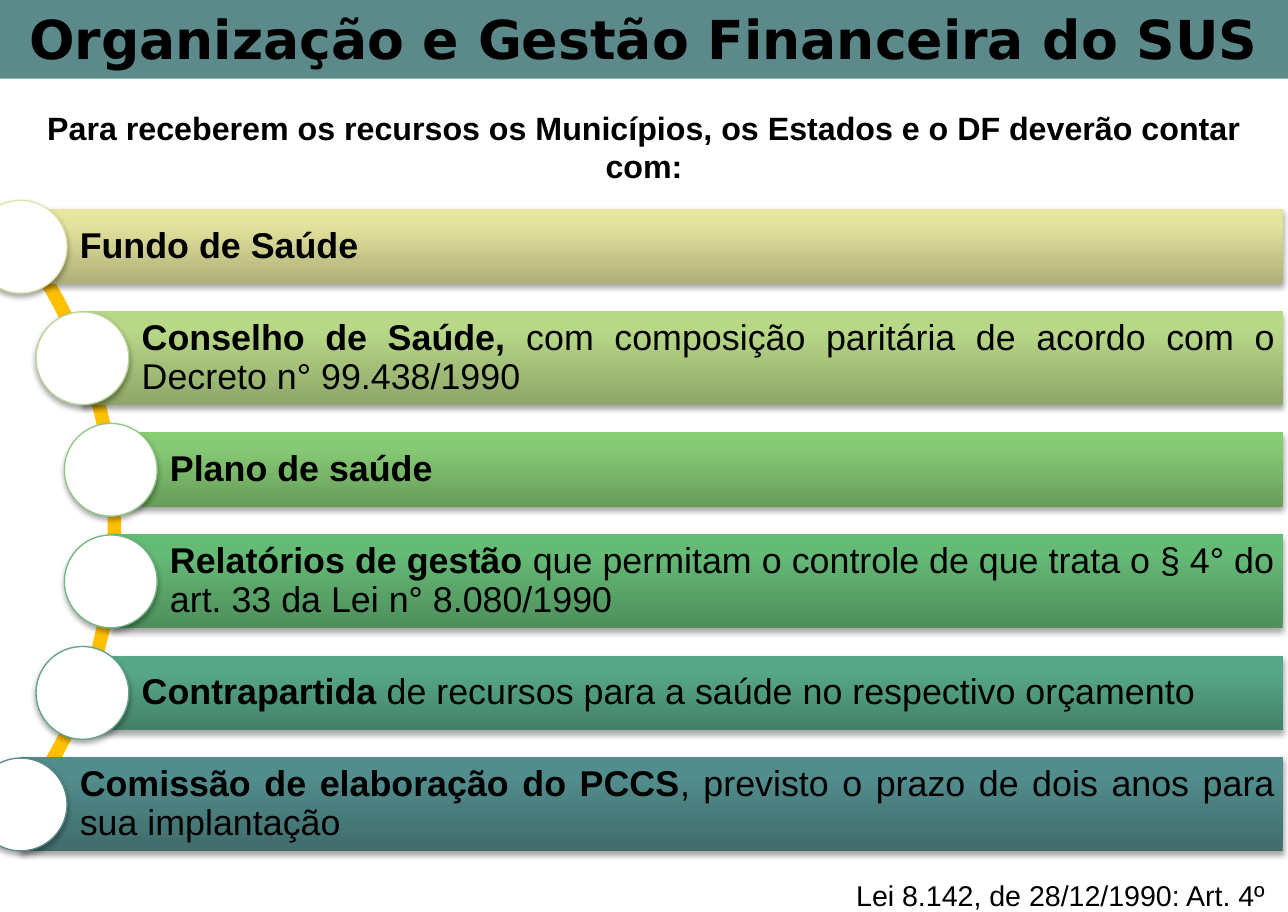
from copy import deepcopy

from pptx import Presentation
from pptx.dml.color import RGBColor
from pptx.enum.shapes import MSO_SHAPE
from pptx.enum.text import MSO_ANCHOR, PP_ALIGN
from pptx.oxml import parse_xml
from pptx.oxml.ns import nsdecls, qn
from pptx.util import Inches, Pt

COLORS = {"title": "5C8A8A", "arc": "FFC000", "text": "000000", "circle": "FFFFFF"}

# Level, bar height, gradient from bottom to top, circle outline, bold text, plain text
ITEMS = [
    (0, 0.58, ("AFAF79", "E3E39D", "E6E69C"), "E2E2AA", "Fundo de Saúde", ""),
    (1, 0.73, ("8EA668", "B8D888", "B9DA87"), "BCD596", "Conselho de Saúde, ",
     "com composição paritária de acordo com o Decreto n° 99.438/1990"),
    (2, 0.58, ("679C5A", "86CA75", "86CD74"), "91C783", "Plano de saúde", ""),
    (2, 0.73, ("4E8F5B", "65BA76", "64BD76"), "72B680", "Relatórios de gestão ",
     "que permitam o controle de que trata o § 4° do art. 33 da Lei n° 8.080/1990"),
    (1, 0.58, ("438168", "57A888", "56AA88"), "64A38A", "Contrapartida",
     " de recursos para a saúde no respectivo orçamento"),
    (0, 0.73, ("406C6C", "528C8C", "528E8E"), "5C8A8A", "Comissão de elaboração do PCCS",
     ", previsto o prazo de dois anos para sua implantação"),
]
LEVEL_LEFT = [0.16, 0.64, 0.86]
BAR_RIGHT = 9.96
FIRST_CENTER, STEP = 1.915, 0.866
DIAMETER = 0.72

SHADOW = parse_xml(
    f'<a:outerShdw {nsdecls("a")} blurRad="40000" dist="23000" dir="5400000" rotWithShape="0">'
    '<a:srgbClr val="000000"><a:alpha val="35000"/></a:srgbClr></a:outerShdw>'
)


def write(shape, *texts, size=20, font="Arial", bold=True, align=PP_ALIGN.CENTER,
          anchor=MSO_ANCHOR.TOP, margins=(0.1, 0.05, 0.1, 0.05), spacing=None):
    """Fill one paragraph; only the first text takes the bold setting."""
    frame = shape.text_frame
    frame.word_wrap = True
    frame.vertical_anchor = anchor
    (frame.margin_left, frame.margin_top,
     frame.margin_right, frame.margin_bottom) = map(Inches, margins)
    para = frame.paragraphs[0]
    para.alignment = align
    para.line_spacing = spacing
    for index, text in enumerate(texts):
        if text:
            span = para.add_run()
            span.text = text
            span.font.name = font
            span.font.size = Pt(size)
            span.font.bold = bold and index == 0
            span.font.color.rgb = RGBColor.from_string(COLORS["text"])


def add_shape(kind, left, top, width, height, fill=None, line=None, line_width=0.75,
              shadow=False):
    """Add a preset shape; a tuple of three colours gives a vertical gradient."""
    shape = page.shapes.add_shape(kind, *map(Inches, (left, top, width, height)))
    if isinstance(fill, tuple):
        shape.fill.gradient()
        shape.fill.gradient_angle = 90
        stop_list = shape._element.spPr.find(qn("a:gradFill")).find(qn("a:gsLst"))
        stop_list.append(deepcopy(stop_list[-1]))
        for stop, position, color in zip(shape.fill.gradient_stops, (0, 0.8, 1), fill):
            stop.position = position
            stop.color.rgb = RGBColor.from_string(color)
    elif fill:
        shape.fill.solid()
        shape.fill.fore_color.rgb = RGBColor.from_string(fill)
    else:
        shape.fill.background()
    if line:
        shape.line.color.rgb = RGBColor.from_string(line)
        shape.line.width = Pt(line_width)
    else:
        shape.line.fill.background()
    shape.shadow.inherit = False
    if shadow:
        shape._element.spPr.find(qn("a:effectLst")).append(deepcopy(SHADOW))
    return shape


deck = Presentation()
deck.slide_width, deck.slide_height = Inches(10), Inches(7.08)
page = deck.slides.add_slide(deck.slide_layouts[6])

# Title band
band = add_shape(MSO_SHAPE.RECTANGLE, 0, 0, 10, 0.61, fill=COLORS["title"])
write(band, "Organização e Gestão Financeira do SUS", size=30, font="DejaVu Sans")

# Arc behind the list, from 315 to 45 degrees
arc = add_shape(MSO_SHAPE.BLOCK_ARC, -6.48, 0.39, 7.38, 7.38, line=COLORS["arc"], line_width=6)
for index, value in enumerate((189, 27, 0.003)):
    arc.adjustments[index] = value

# Bars with their circles
for row, (level, height, gradient, outline, strong, plain) in enumerate(ITEMS):
    left = LEVEL_LEFT[level]
    center = FIRST_CENTER + row * STEP
    bar = add_shape(MSO_SHAPE.RECTANGLE, left, center - height / 2, BAR_RIGHT - left, height,
                    fill=gradient, shadow=True)
    write(bar, strong, plain, align=PP_ALIGN.JUSTIFY, anchor=MSO_ANCHOR.MIDDLE,
          margins=(0.46, 0.06, 0.06, 0.06), spacing=0.9)
    add_shape(MSO_SHAPE.OVAL, left - DIAMETER / 2, center - DIAMETER / 2, DIAMETER, DIAMETER,
              fill=COLORS["circle"], line=outline, shadow=True)

# Lead sentence and legal source
lead = page.shapes.add_textbox(Inches(0), Inches(0.79), Inches(10), Inches(0.71))
write(lead, "Para receberem os recursos os Municípios, os Estados e o DF deverão contar com:",
      size=18)
law = page.shapes.add_textbox(Inches(4.92), Inches(6.77), Inches(5), Inches(0.37))
write(law, "Lei 8.142, de 28/12/1990: Art. 4º", size=16, bold=False, align=PP_ALIGN.RIGHT)

deck.save("out.pptx")
